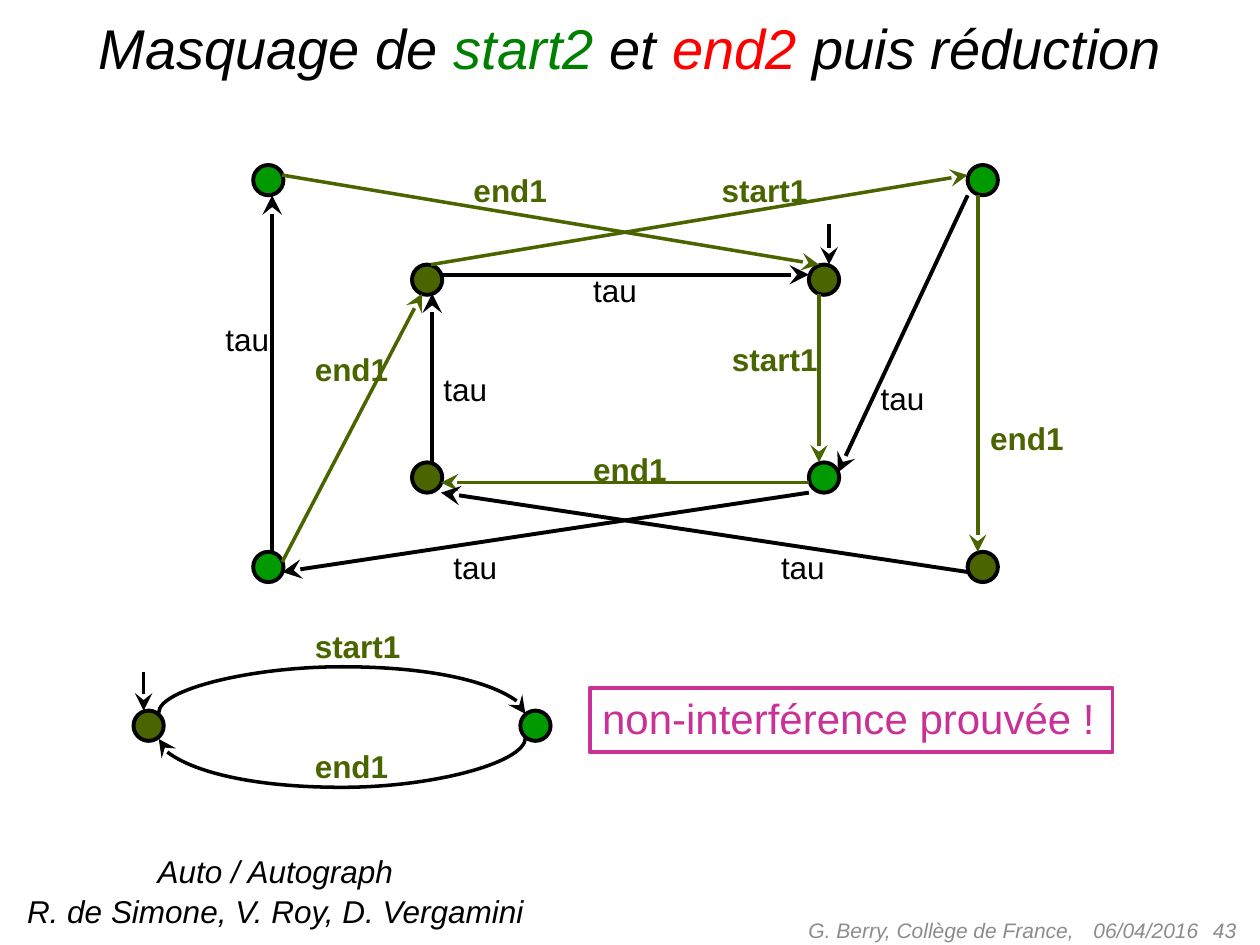
from typing import NamedTuple

from lxml import etree
from pptx import Presentation
from pptx import util as u
from pptx.dml.color import RGBColor
from pptx.enum import shapes, text
from pptx.oxml import ns

BLACK, OLIVE, GREEN = "000000", "4A6400", "009A00"
GREY, PINK = "8C8C8C", "C83296"
NODE_SIZE = 0.24
CURVE_DEPTH = 0.01


class Node(NamedTuple):
    x: float
    y: float
    color: str


class Edge(NamedTuple):
    start: tuple[float, float]
    end: tuple[float, float]
    color: str = BLACK
    width: float = 2.25


class Label(NamedTuple):
    text: str
    x: float
    y: float


INNER_X, INNER_Y = (3.27, 6.42), (2.1, 3.67)
OUTER_X, OUTER_Y = (2.01, 7.68), (1.31, 4.38)

NODES = [
    Node(INNER_X[0], INNER_Y[0], OLIVE), Node(INNER_X[1], INNER_Y[0], OLIVE),
    Node(INNER_X[0], INNER_Y[1], OLIVE), Node(INNER_X[1], INNER_Y[1], GREEN),
    Node(OUTER_X[0], OUTER_Y[0], GREEN), Node(OUTER_X[1], OUTER_Y[0], GREEN),
    Node(OUTER_X[0], OUTER_Y[1], GREEN), Node(OUTER_X[1], OUTER_Y[1], OLIVE),
    Node(1.06, 5.64, OLIVE), Node(4.13, 5.64, GREEN),
]

EDGES = [
    # Inner square
    Edge((3.5, 2.18), (6.42, 2.18)),
    Edge((6.42, 3.83), (3.5, 3.83), OLIVE, 2),
    Edge((6.5, 2.33), (6.5, 3.67), OLIVE, 2),
    Edge((3.43, 3.67), (3.43, 2.33)),
    # Between the squares
    Edge((3.42, 2.1), (7.68, 1.39), OLIVE, 2),
    Edge((6.42, 3.91), (2.24, 4.54)),
    Edge((2.24, 1.39), (6.5, 2.1), OLIVE, 2),
    Edge((7.68, 4.54), (3.5, 3.91)),
    Edge((2.24, 4.46), (3.35, 2.33), OLIVE, 2),
    Edge((7.68, 1.55), (6.65, 3.75)),
    # Outer sides
    Edge((7.76, 1.55), (7.76, 4.38), OLIVE, 2),
    Edge((2.16, 4.38), (2.16, 1.55)),
    # Initial states
    Edge((6.58, 1.78), (6.58, 2.1), BLACK, 2),
    Edge((1.14, 5.33), (1.14, 5.64), BLACK, 2),
]

LABELS = [
    Label("start1", 5.71, 2.65), Label("start1", 5.63, 1.31),
    Label("end1", 4.61, 3.52), Label("end1", 2.4, 2.73),
    Label("end1", 3.66, 1.31), Label("end1", 7.76, 3.28),
    Label("tau", 4.61, 2.1), Label("tau", 3.42, 2.89),
    Label("tau", 6.89, 2.96), Label("tau", 6.1, 4.3),
    Label("tau", 3.5, 4.3), Label("tau", 1.69, 2.49),
    Label("start1", 2.4, 4.93), Label("end1", 2.4, 5.88),
]
LABEL_WIDTHS = {"start1": 1.06, "end1": 0.87, "tau": 0.55}


def rgb(color: str) -> RGBColor:
    return RGBColor.from_string(color)


def add_text(s, content, x: float, y: float, w: float, h: float, *, size: float,
             color: str = BLACK, bold: bool = False, italic: bool = False,
             align=text.PP_ALIGN.LEFT, anchor=text.MSO_ANCHOR.TOP, wrap: bool = True,
             top: float = 0.05, bottom: float = 0.05, spacing: float = 1.0):
    """Add a text box; content is a list of paragraphs, each a list of (text, colour or None)."""
    if isinstance(content, str):
        content = [[(content, None)]]
    sp = s.shapes.add_textbox(*map(u.Inches, (x, y, w, h)))
    tf = sp.text_frame
    tf.word_wrap = wrap
    tf.vertical_anchor = anchor
    tf.margin_top, tf.margin_bottom = u.Inches(top), u.Inches(bottom)
    for i, runs in enumerate(content):
        p = tf.add_paragraph() if i else tf.paragraphs[0]
        p.alignment = align
        p.line_spacing = spacing
        for words, run_color in runs:
            r = p.add_run()
            r.text = words
            r.font.name, r.font.size = "Arial", u.Pt(size)
            r.font.bold, r.font.italic = bold, italic
            r.font.color.rgb = rgb(run_color or color)
    return sp


def add_node(s, node: Node) -> None:
    sp = s.shapes.add_shape(shapes.MSO_SHAPE.OVAL, u.Inches(node.x), u.Inches(node.y),
                            u.Inches(NODE_SIZE), u.Inches(NODE_SIZE))
    sp.shadow.inherit = False
    sp.fill.solid()
    sp.fill.fore_color.rgb = rgb(node.color)
    sp.line.color.rgb = rgb(BLACK)
    sp.line.width = u.Pt(2.25)


def add_edge(s, edge: Edge, kind=shapes.MSO_CONNECTOR.STRAIGHT):
    cx = s.shapes.add_connector(kind, *map(u.Inches, edge.start + edge.end))
    cx.line.color.rgb = rgb(edge.color)
    cx.line.width = u.Pt(edge.width)
    etree.SubElement(cx.line._get_or_add_ln(), ns.qn("a:tailEnd"),
                     type="stealth", w="lg", len="lg")
    etree.SubElement(cx._element.spPr, ns.qn("a:effectLst"))
    return cx


def add_arc(s, start_x: float, end_x: float, y: float, bend: float) -> None:
    """Add a curved arrow between two points at height y, bulging down by bend (up if negative)."""
    span = abs(end_x - start_x)
    left = (start_x + end_x - CURVE_DEPTH) / 2
    top = y - span / 2
    edge = Edge((left, top), (left + CURVE_DEPTH, top + span), BLACK, 2)
    cx = add_edge(s, edge, shapes.MSO_CONNECTOR.CURVE)
    xfrm = cx._element.spPr.find(ns.qn("a:xfrm"))
    xfrm.set("rot", str(90 * 60000))
    if start_x < end_x:
        xfrm.set("flipV", "1")
    geom = cx._element.spPr.find(ns.qn("a:prstGeom"))
    guides = geom.find(ns.qn("a:avLst"))
    if guides is None:
        guides = etree.SubElement(geom, ns.qn("a:avLst"))
    etree.SubElement(guides, ns.qn("a:gd"), name="adj1",
                     fmla=f"val {round(bend / CURVE_DEPTH * 100000)}")


def add_footer(s, words: str, x: float, w: float, align) -> None:
    add_text(s, words, x, 7.18, w, 0.4, size=12, color=GREY, italic=True,
             align=align, anchor=text.MSO_ANCHOR.MIDDLE)


def main() -> None:
    prs = Presentation()
    prs.slide_width, prs.slide_height = u.Inches(10), u.Inches(7.5)
    s = prs.slides.add_slide(prs.slide_layouts[6])

    title = [("Masquage de ", None), ("start2", "008000"), (" et ", None),
             ("end2", "FF0000"), (" puis réduction", None)]
    add_text(s, [title], 0.25, 0.05, 9.5, 0.64, size=32, italic=True,
             align=text.PP_ALIGN.CENTER, anchor=text.MSO_ANCHOR.MIDDLE)

    add_footer(s, "06/04/2016", 8.58, 1.2, text.PP_ALIGN.LEFT)
    add_footer(s, "43", 9.31, 0.6, text.PP_ALIGN.RIGHT)
    add_footer(s, "G. Berry, Collège de France, ", 5.5, 3.17, text.PP_ALIGN.RIGHT)

    for node in NODES:
        add_node(s, node)
    for edge in EDGES:
        add_edge(s, edge)
    add_arc(s, 1.26, 4.17, 5.66, -0.37)
    add_arc(s, 4.17, 1.26, 5.86, 0.4)
    for label in LABELS:
        hidden = label.text == "tau"
        add_text(s, label.text, label.x, label.y, LABEL_WIDTHS[label.text], 0.4,
                 size=18, color=BLACK if hidden else OLIVE, bold=not hidden)

    note = dict(wrap=False, top=0.02, bottom=0.07, spacing=1.05)
    result = add_text(s, "non-interférence prouvée !", 4.68, 5.46, 4.15, 0.51,
                      size=24, color=PINK, **note)
    result.line.color.rgb = rgb(PINK)
    result.line.width = u.Pt(2.25)
    credits = [[("Auto / Autograph", None)], [("R. de Simone, V. Roy, D. Vergamini", None)]]
    add_text(s, credits, 0.04, 6.73, 4.29, 0.72, size=18, italic=True,
             align=text.PP_ALIGN.CENTER, **note)

    prs.save("out.pptx")


if __name__ == "__main__":
    main()
